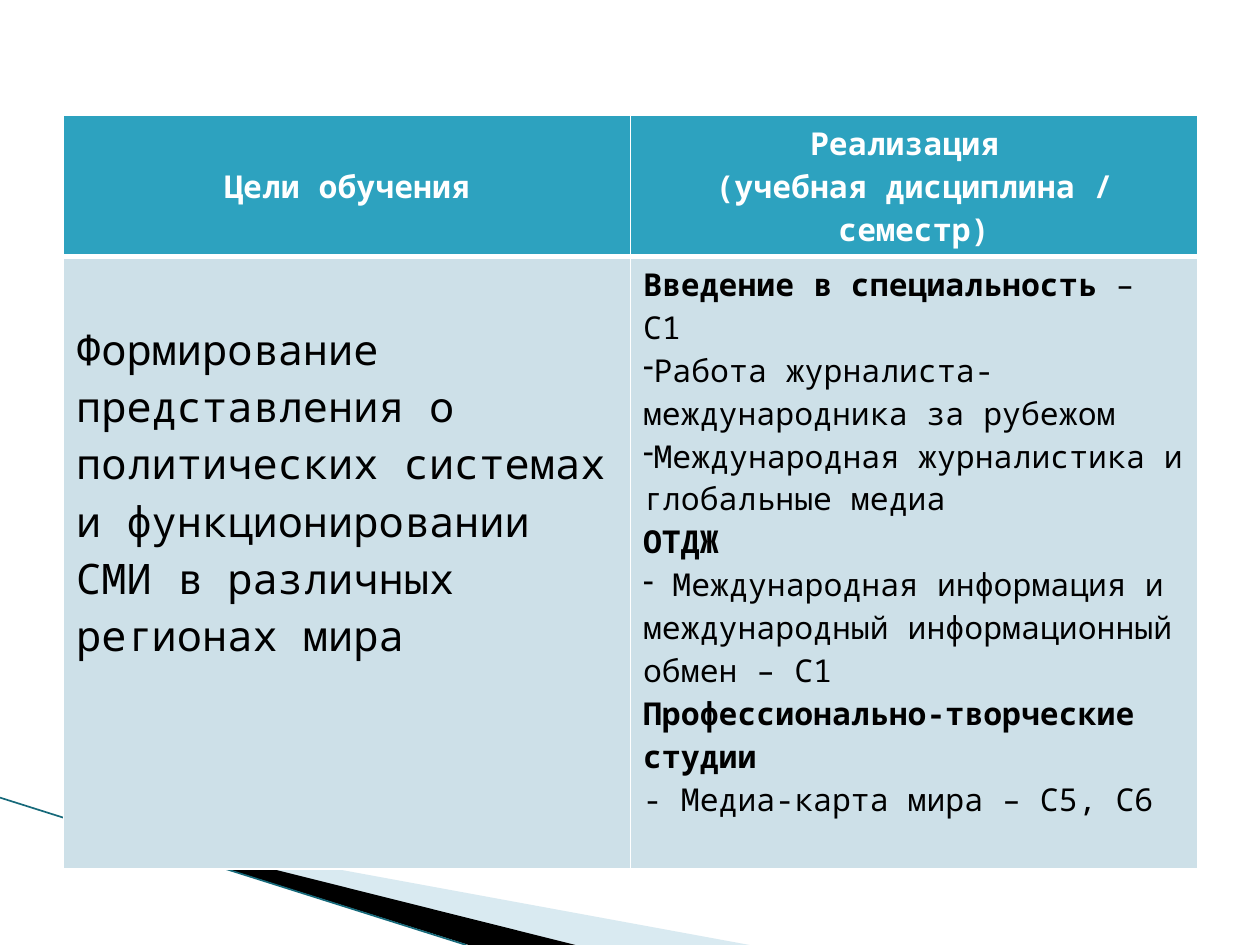
from dataclasses import dataclass
from lxml import etree
from pptx import Presentation, util as u
from pptx.dml.color import RGBColor
from pptx.enum import text
from pptx.oxml import ns


@dataclass
class Theme:
    font: str = "Noto Sans Mono"
    head: str = "2DA2BF"
    body: str = "CDE0E8"
    white: str = "FFFFFF"
    black: str = "000000"
    pale: str = "A0CBDC"
    line: str = "16697A"
    small: int = 18
    large: int = 24
    thin: int = 1
    thick: int = 3


th = Theme()


def add(root, tag, **attrs):
    return etree.SubElement(root, ns.qn(tag), **attrs)


def edge(cell, side, width):
    ln = add(cell._tc.get_or_add_tcPr(), f"a:ln{side}", w=str(u.Pt(width)))
    add(add(ln, "a:solidFill"), "a:srgbClr", val=th.white)


prs = Presentation()
prs.slide_width, prs.slide_height = u.Cm(25.4), u.Cm(19.05)
slide = prs.slides.add_slide(prs.slide_layouts[6])

bands = [
    (th.pale, 40, [(1.4, 16.53), (15.11, 19.05), (11.58, 19.05), (1.4, 16.51)]),
    (th.black, 100, [(1.35, 16.48), (11.6, 19.05), (9.45, 19.05), (1.37, 16.51)]),
]
for color, alpha, spots in bands:
    spots = [(u.Cm(x), u.Cm(y)) for x, y in spots]
    path = slide.shapes.build_freeform(*spots[0])
    path.add_line_segments(spots[1:], close=True)
    band = path.convert_to_shape()
    band.shadow.inherit = False
    band.line.fill.background()
    band.fill.solid()
    band.fill.fore_color.rgb = RGBColor.from_string(color)
    if alpha < 100:
        tint = band._element.spPr.find(".//" + ns.qn("a:srgbClr"))
        add(tint, "a:alpha", val=str(alpha * 1000))

rule = slide.shapes.add_connector(1, u.Cm(0), u.Cm(16.08), u.Cm(9.4), u.Cm(19.05))
rule.line.color.rgb = RGBColor.from_string(th.line)
rule.line.width = u.Pt(0.95)
add(rule._element.spPr, "a:effectLst")

heads = [
    [("", [("Цели обучения", True)])],
    [("", [("Реализация ", True)]),
     ("", [("(учебная дисциплина / семестр)", True)])],
]
goal = [("", [("Формирование представления о политических системах "
               "и функционировании СМИ в различных регионах мира", False)])]
plan = [
    ("", [("Введение в специальность ", True), ("– С1", False)]),
    ("-", [("Работа журналиста-международника за рубежом", False)]),
    ("-", [("Международная журналистика и глобальные медиа", False)]),
    ("", [("ОТДЖ", True)]),
    ("-", [(" Международная информация и международный "
            "информационный обмен – С1", False)]),
    ("", [("Профессионально-творческие студии", True)]),
    ("", [("- Медиа-карта мира – С5, С6", False)]),
]
rows = [heads, [goal, plan]]
tall = [2.84, 12.34]

table = slide.shapes.add_table(
    2, 2, u.Cm(1.28), u.Cm(2.33), u.Cm(22.86), u.Cm(sum(tall))).table
for r, row in enumerate(rows):
    table.rows[r].height = u.Cm(tall[r])
    top = r == 0
    for c, paras in enumerate(row):
        cell = table.cell(r, c)
        big = paras is goal
        for side in "LRTB":
            bold = side == ("B" if top else "T")
            edge(cell, side, th.thick if bold else th.thin)
        cell.fill.solid()
        cell.fill.fore_color.rgb = RGBColor.from_string(th.head if top else th.body)
        cell.vertical_anchor = (text.MSO_ANCHOR.MIDDLE if top
                                else text.MSO_ANCHOR.TOP)
        if big:
            cell.margin_top = u.Cm(1.28)
        frame = cell.text_frame
        for n, (mark, runs) in enumerate(paras):
            para = frame.add_paragraph() if n else frame.paragraphs[0]
            if mark:
                props = para._p.get_or_add_pPr()
                props.set("marL", "0")
                props.set("indent", "0")
                add(props, "a:buChar", char=mark)
            para.alignment = text.PP_ALIGN.CENTER if top else text.PP_ALIGN.LEFT
            for words, bold in runs:
                run = para.add_run()
                run.text = words
                run.font.name = th.font
                run.font.size = u.Pt(th.large if big else th.small)
                run.font.bold = bold
                run.font.color.rgb = RGBColor.from_string(
                    th.white if top else th.black)

prs.save("out.pptx")
